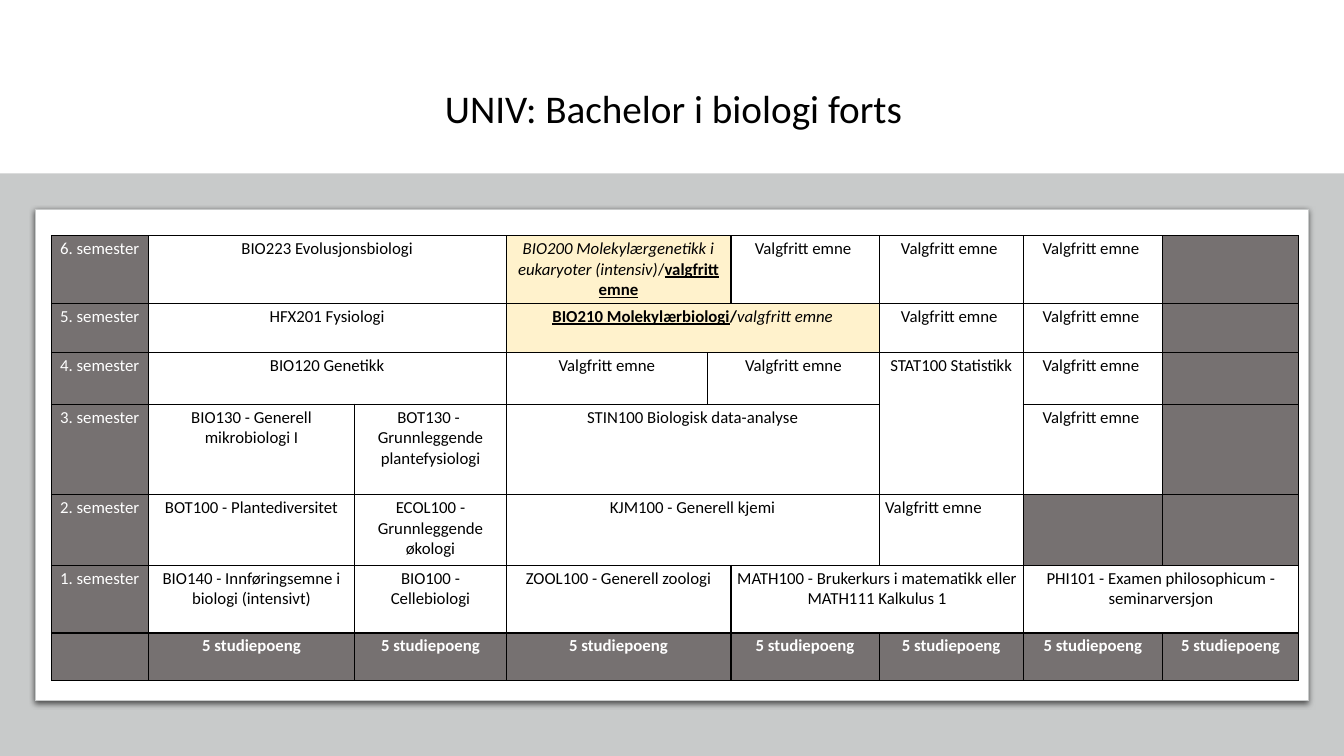
from dataclasses import dataclass

from lxml import etree
from pptx import Presentation
from pptx.dml.color import RGBColor
from pptx.enum.shapes import MSO_SHAPE as Shape
from pptx.enum.text import MSO_ANCHOR as Anchor, PP_ALIGN as Align
from pptx.oxml.ns import qn
from pptx.util import Emu, Pt

PX = 9144  # 100 px to the inch
FONT = "Calibri"
BLACK, WHITE, DARK, PANEL, CREAM = "000000", "FFFFFF", "767171", "C8CACA", "FFF2CC"


@dataclass(frozen=True)
class Run:
    text: str
    bold: bool = False
    italic: bool = False
    underline: bool = False


@dataclass(frozen=True)
class Course:
    runs: tuple[Run, ...] = ()
    cols: int = 1
    rows: int = 1
    fill: str = WHITE
    color: str = BLACK
    align: Align = Align.CENTER


def course(text: str, cols: int = 1, rows: int = 1, align: Align = Align.CENTER) -> Course:
    return Course((Run(text),), cols, rows, align=align)


def semester(number: int) -> Course:
    return Course((Run(f"{number}. semester"),), fill=DARK, color=WHITE)


def credits(cols: int = 1) -> Course:
    return Course((Run("5 studiepoeng", bold=True),), cols, fill=DARK, color=WHITE)


CLOSED = Course(fill=DARK)
ELECTIVE = course("Valgfritt emne ")
PLAIN_ELECTIVE = course("Valgfritt emne")
MOLECULAR_GENETICS = Course(
    (Run("BIO200 Molekylærgenetikk i eukaryoter (intensiv)", italic=True), Run("/"),
     Run("valgfritt emne", bold=True, underline=True)), cols=2, fill=CREAM)
MOLECULAR_BIOLOGY = Course(
    (Run("BIO210 Molekylærbiologi", bold=True, underline=True), Run("/", bold=True),
     Run("valgfritt emne", italic=True)), cols=3, fill=CREAM)

COL_WIDTHS = (96, 205, 150, 200, 23, 147, 143, 138, 135)
ROW_HEIGHTS = (67, 49, 51, 90, 70, 67, 47)
PLAN = (
    (semester(6), course("BIO223 Evolusjonsbiologi", 2), MOLECULAR_GENETICS,
     ELECTIVE, ELECTIVE, ELECTIVE, CLOSED),
    (semester(5), course("HFX201 Fysiologi", 2), MOLECULAR_BIOLOGY,
     ELECTIVE, ELECTIVE, CLOSED),
    (semester(4), course("BIO120 Genetikk", 2), PLAIN_ELECTIVE,
     course("Valgfritt emne", 2), course("STAT100 Statistikk", rows=2), ELECTIVE, CLOSED),
    (semester(3), course("BIO130 - Generell mikrobiologi I"),
     course("BOT130 -  Grunnleggende plantefysiologi"),
     course("STIN100 Biologisk data-analyse", 3), ELECTIVE, CLOSED),
    (semester(2), course("BOT100 - Plantediversitet"),
     course("ECOL100 - Grunnleggende økologi"), course("KJM100 - Generell kjemi", 3),
     course("Valgfritt emne", align=Align.LEFT), CLOSED, CLOSED),
    (semester(1), course("BIO140 - Innføringsemne i biologi (intensivt)"),
     course("BIO100 - Cellebiologi"), course("ZOOL100 - Generell zoologi", 2),
     course("MATH100 - Brukerkurs i matematikk eller MATH111 Kalkulus 1", 2),
     course("PHI101 - Examen philosophicum - seminarversjon", 2)),
    (CLOSED, credits(), credits(), credits(2), credits(), credits(), credits(), credits()),
)


def px(n: int) -> Emu:
    return Emu(n * PX)


def rgb(color: str) -> RGBColor:
    return RGBColor.from_string(color)


def paint(target, color: str) -> None:
    target.fill.solid()
    target.fill.fore_color.rgb = rgb(color)


def style_font(font, size: int, color: str) -> None:
    font.name, font.size = FONT, Pt(size)
    font.color.rgb = rgb(color)


def add_title(slide, text: str) -> None:
    tf = slide.shapes.add_textbox(px(141), px(37), px(1054), px(102)).text_frame
    tf.word_wrap = True
    tf.vertical_anchor = Anchor.BOTTOM
    tf.margin_bottom = px(8)
    tf.text = text
    p = tf.paragraphs[0]
    p.alignment, p.line_spacing = Align.CENTER, 0.9
    style_font(p.runs[0].font, 28, BLACK)


def add_panel(slide, kind: Shape, box: tuple[int, int, int, int], color: str):
    sp = slide.shapes.add_shape(kind, *map(px, box))
    sp.shadow.inherit = False
    paint(sp, color)
    sp.line.fill.background()
    return sp


def add_card(slide) -> None:
    sp = add_panel(slide, Shape.ROUNDED_RECTANGLE, (35, 208, 1263, 487), WHITE)
    sp.adjustments[0] = 0
    sp.line.color.rgb = rgb(PANEL)
    sp.line.width = Pt(0.75)
    effects = sp._element.spPr.find(qn("a:effectLst"))
    shadow = etree.SubElement(effects, qn("a:outerShdw"), blurRad=str(Pt(4.5)),
                              dist=str(Pt(1.5)), dir="5400000", rotWithShape="0")
    tint = etree.SubElement(shadow, qn("a:srgbClr"), val=BLACK)
    etree.SubElement(tint, qn("a:alpha"), val="63000")


def add_borders(cell) -> None:
    tc_pr = cell._tc.get_or_add_tcPr()
    for side in ("lnL", "lnR", "lnT", "lnB"):
        ln = etree.SubElement(tc_pr, qn(f"a:{side}"), w=str(Pt(1)))
        fill = etree.SubElement(ln, qn("a:solidFill"))
        etree.SubElement(fill, qn("a:srgbClr"), val=BLACK)


def fill_cell(cell, item: Course) -> None:
    paint(cell, item.fill)
    p = cell.text_frame.paragraphs[0]
    p.alignment = item.align
    p.font.size = Pt(12)
    for run in item.runs:
        r = p.add_run()
        r.text = run.text
        style_font(r.font, 12, item.color)
        r.font.bold, r.font.italic, r.font.underline = run.bold, run.italic, run.underline


def add_plan(slide) -> None:
    size = px(sum(COL_WIDTHS)), px(sum(ROW_HEIGHTS))
    table = slide.shapes.add_table(len(ROW_HEIGHTS), len(COL_WIDTHS),
                                   px(51), px(234), *size).table
    table.first_row = table.horz_banding = False
    for column, width in zip(table.columns, COL_WIDTHS):
        column.width = px(width)
    for row, height in zip(table.rows, ROW_HEIGHTS):
        row.height = px(height)
    for cell in table.iter_cells():
        cell.margin_left = cell.margin_right = px(6)
        cell.margin_top = cell.margin_bottom = px(3)
        add_borders(cell)
        paint(cell, WHITE)
    for y, items in enumerate(PLAN):
        x = 0
        for item in items:
            while table.cell(y, x).is_spanned:
                x += 1
            cell = table.cell(y, x)
            if item.cols * item.rows > 1:
                cell.merge(table.cell(y + item.rows - 1, x + item.cols - 1))
            fill_cell(cell, item)
            x += item.cols


def main() -> None:
    prs = Presentation()
    prs.slide_width, prs.slide_height = px(1333), px(750)
    slide = prs.slides.add_slide(prs.slide_layouts[6])
    add_title(slide, "UNIV: Bachelor i biologi forts")
    add_panel(slide, Shape.RECTANGLE, (0, 172, 1333, 578), PANEL)
    add_card(slide)
    add_plan(slide)
    prs.save("out.pptx")


if __name__ == "__main__":
    main()
